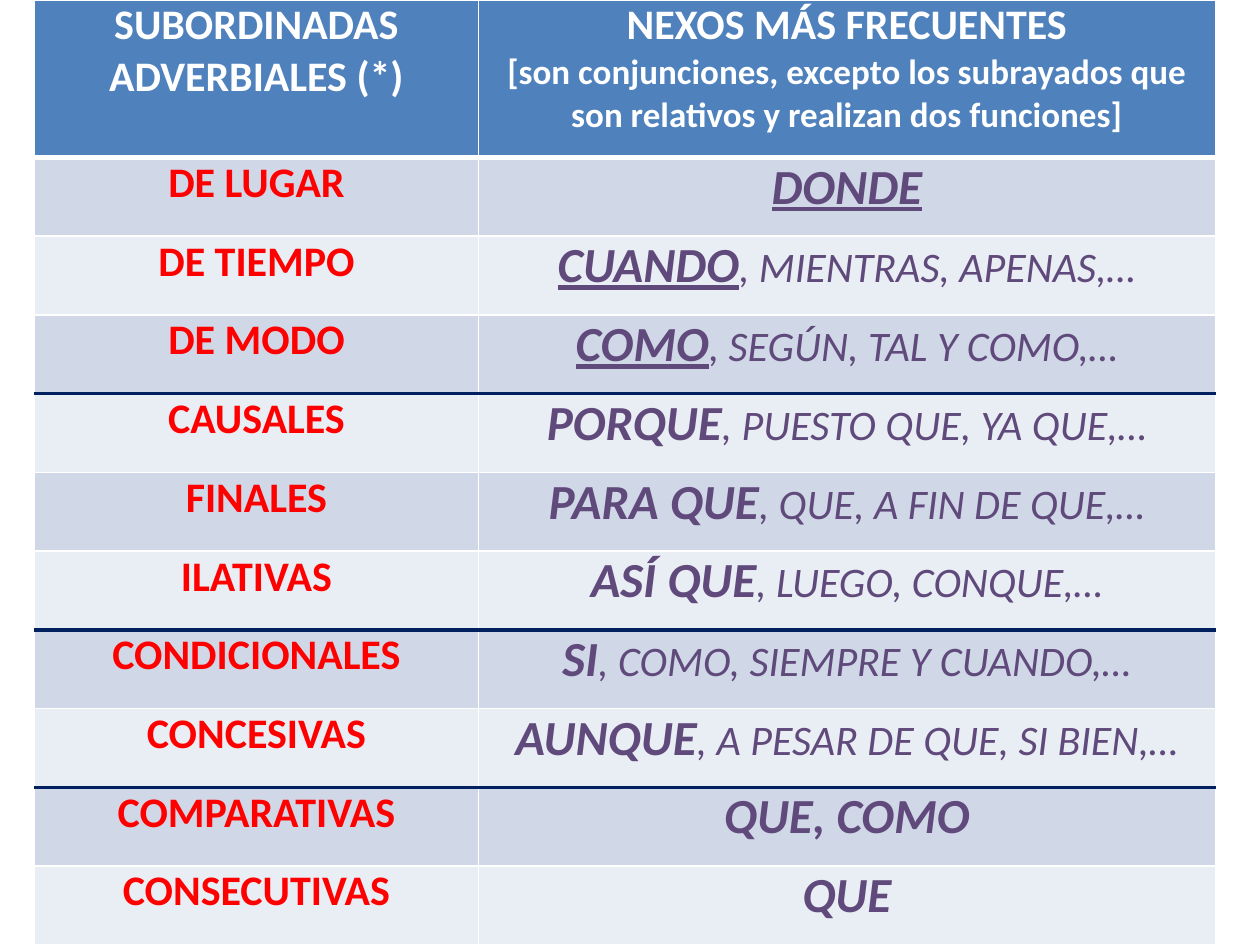
from lxml import etree
from pptx import Presentation
from pptx.dml.color import RGBColor
from pptx.enum.text import PP_ALIGN
from pptx.oxml.ns import qn
from pptx.util import Pt

CENTER = PP_ALIGN.CENTER
FONT = "Calibri"
WHITE, NAVY, BLUE = "FFFFFF", "002060", "4F81BD"
RED, PURPLE = "FF0000", "604A7B"
BANDS = ("D0D8E8", "E9EDF4")

HEADER_LEFT = [("SUBORDINADAS ADVERBIALES (*)", 24)]
HEADER_RIGHT = [
    ("NEXOS MÁS FRECUENTES", 24),
    ("[son conjunciones, excepto los subrayados que son relativos y realizan dos funciones]", 20),
]
CLAUSES = [
    ("DE LUGAR", "DONDE", ""),
    ("DE TIEMPO", "CUANDO", ", MIENTRAS, APENAS,…"),
    ("DE MODO", "COMO", ", SEGÚN, TAL Y COMO,…"),
    ("CAUSALES", "PORQUE", ", PUESTO QUE, YA QUE,…"),
    ("FINALES", "PARA QUE", ", QUE, A FIN DE QUE,…"),
    ("ILATIVAS", "ASÍ QUE", ", LUEGO, CONQUE,…"),
    ("CONDICIONALES", "SI", ", COMO, SIEMPRE Y CUANDO,…"),
    ("CONCESIVAS", "AUNQUE", ", A PESAR DE QUE, SI BIEN,…"),
    ("COMPARATIVAS", "QUE, COMO", ""),
    ("CONSECUTIVAS", "QUE", ""),
]
RELATIVE_ROWS = (1, 2, 3)
GROUP_ENDS = (3, 6, 8)

LEFT, TOP = 19.8, 0
COLUMN_WIDTHS = (253.5, 421.2)
HEADER_HEIGHT, ROW_HEIGHT = 90, 45


def color(value):
    return RGBColor.from_string(value)


def rule_below(row):
    if row == 0:
        return WHITE, 3
    return (NAVY, 2.25) if row in GROUP_ENDS else (WHITE, 1)


def add_border(cell, side, line_color, width):
    properties = cell._tc.get_or_add_tcPr()
    line = etree.SubElement(properties, qn(f"a:{side}"), w=str(Pt(width)))
    fill = etree.SubElement(line, qn("a:solidFill"))
    etree.SubElement(fill, qn("a:srgbClr"), val=line_color)


def format_cell(cell, row, fill_color):
    cell.margin_left = cell.margin_right = cell.margin_top = cell.margin_bottom = 0
    add_border(cell, "lnL", WHITE, 1)
    add_border(cell, "lnR", WHITE, 1)
    add_border(cell, "lnT", *(rule_below(row - 1) if row else (WHITE, 1)))
    add_border(cell, "lnB", *rule_below(row))
    cell.fill.solid()
    cell.fill.fore_color.rgb = color(fill_color)


def add_run(paragraph, text, size, text_color, bold=True, italic=False, underline=False):
    paragraph.alignment = CENTER
    run = paragraph.add_run()
    run.text = text
    font = run.font
    font.name, font.size = FONT, Pt(size)
    font.bold, font.italic, font.underline = bold, italic, underline
    font.color.rgb = color(text_color)


def fill_header(cell, lines):
    format_cell(cell, 0, BLUE)
    frame = cell.text_frame
    for index, (text, size) in enumerate(lines):
        paragraph = frame.add_paragraph() if index else frame.paragraphs[0]
        add_run(paragraph, text, size, WHITE)


def fill_clause(table, row, name, main_link, other_links):
    name_cell, link_cell = table.cell(row, 0), table.cell(row, 1)
    for cell in (name_cell, link_cell):
        format_cell(cell, row, BANDS[(row - 1) % 2])
    add_run(name_cell.text_frame.paragraphs[0], name, 24, RED)
    paragraph = link_cell.text_frame.paragraphs[0]
    add_run(paragraph, main_link, 28, PURPLE, italic=True, underline=row in RELATIVE_ROWS)
    if other_links:
        add_run(paragraph, other_links, 24, PURPLE, bold=False, italic=True)


def main():
    presentation = Presentation()
    presentation.slide_width, presentation.slide_height = Pt(720), Pt(540)
    slide = presentation.slides.add_slide(presentation.slide_layouts[6])
    height = HEADER_HEIGHT + ROW_HEIGHT * len(CLAUSES)
    table = slide.shapes.add_table(
        len(CLAUSES) + 1, len(COLUMN_WIDTHS),
        Pt(LEFT), Pt(TOP), Pt(sum(COLUMN_WIDTHS)), Pt(height),
    ).table
    for column, width in zip(table.columns, COLUMN_WIDTHS):
        column.width = Pt(width)
    for index, row in enumerate(table.rows):
        row.height = Pt(ROW_HEIGHT if index else HEADER_HEIGHT)
    fill_header(table.cell(0, 0), HEADER_LEFT)
    fill_header(table.cell(0, 1), HEADER_RIGHT)
    for row, clause in enumerate(CLAUSES, start=1):
        fill_clause(table, row, *clause)
    presentation.save("out.pptx")


if __name__ == "__main__":
    main()
